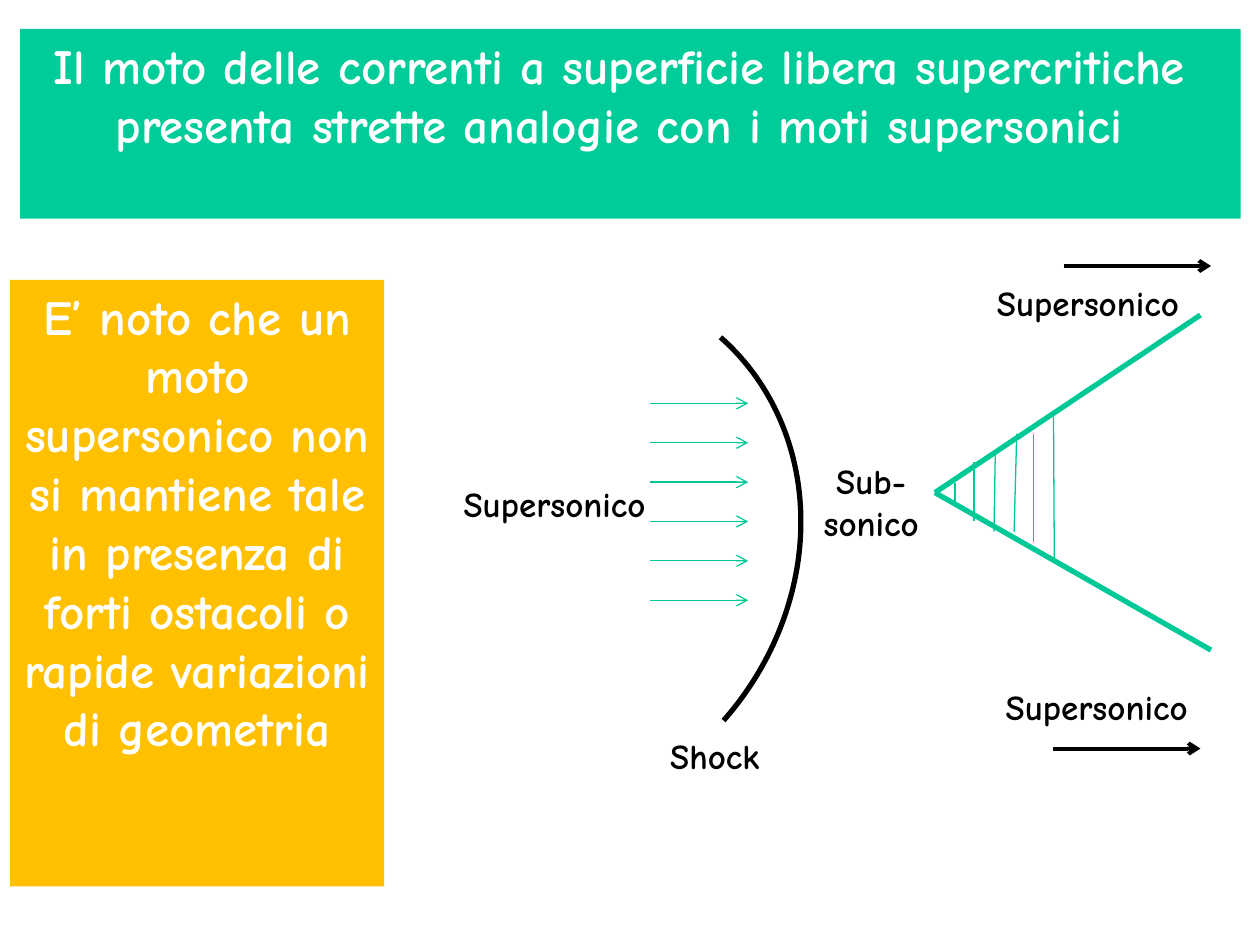
from typing import NamedTuple

import pptx
import pptx.dml.color
import pptx.enum.shapes
import pptx.enum.text
import pptx.oxml
import pptx.oxml.ns
import pptx.util

Pt = pptx.util.Pt
RGBColor = pptx.dml.color.RGBColor
MSO_SHAPE = pptx.enum.shapes.MSO_SHAPE

FONT = "Comic Neue"
WHITE = RGBColor(0xFF, 0xFF, 0xFF)
BLACK = RGBColor(0, 0, 0)
BANNER_GREEN = RGBColor(0x00, 0xCC, 0x99)
LINE_GREEN = RGBColor(0x00, 0xC8, 0x96)
ORANGE = RGBColor(0xFF, 0xC0, 0x00)


class Box(NamedTuple):
    left: float
    top: float
    width: float
    height: float


class Line(NamedTuple):
    x1: float
    y1: float
    x2: float
    y2: float
    color: RGBColor = LINE_GREEN
    weight: float = 0.75
    arrow: bool = False


class Label(NamedTuple):
    text: str
    box: Box


BANNER = Box(11.5, 16.5, 697.5, 108.5)
NOTE = Box(5.75, 160, 213.75, 346.5)
SHOCK = Box(157.75, 152, 292.25, 326.25)
SHOCK_ROTATION = 41.4

APEX = (534.25, 281.5)
WEDGE = [
    Line(*APEX, 686, 180, weight=3),
    Line(*APEX, 692, 371.5, weight=3),
]
HATCHING = [
    Line(545.75, 275.75, 545.75, 286.5),
    Line(556.5, 264.25, 556.5, 298),
    Line(568.75, 258.5, 568, 303.75),
    Line(581, 247.75, 579.5, 303.75),
    Line(590.5, 247.75, 590.5, 309.5),
    Line(602, 236.25, 602.5, 321),
]
INFLOW_TOP, INFLOW_STEP = 230.5, 22.5
INFLOW = [
    Line(371.5, y, 427.5, y, arrow=True)
    for y in (INFLOW_TOP + i * INFLOW_STEP for i in range(6))
]
OUTFLOW = [
    Line(607.75, 152, 692, 152, BLACK, 2.25, True),
    Line(602, 427.75, 686, 427.75, BLACK, 2.25, True),
]
LABELS = [
    Label("Supersonico", Box(224.5, 272, 185, 31.5)),
    Label("Sub-\nsonico", Box(439.25, 259, 117.25, 55.5)),
    Label("Supersonico", Box(529.25, 157.5, 185, 31.5)),
    Label("Supersonico", Box(534.25, 388.25, 185, 31.5)),
    Label("Shock", Box(316, 416.25, 185, 31.5)),
]


def place(sp, box: Box) -> None:
    sp.left, sp.top, sp.width, sp.height = (Pt(v) for v in box)


def write(sp, text: str, size: float, color: RGBColor) -> None:
    """Fill a shape with bold centred text that starts at its top."""
    tf = sp.text_frame
    tf.text = text
    tf.word_wrap = True
    tf.auto_size = pptx.enum.text.MSO_AUTO_SIZE.NONE
    tf.vertical_anchor = pptx.enum.text.MSO_ANCHOR.TOP
    for p in tf.paragraphs:
        p.alignment = pptx.enum.text.PP_ALIGN.CENTER
        for r in p.runs:
            r.font.name = FONT
            r.font.size = Pt(size)
            r.font.bold = True
            r.font.color.rgb = color


def fill(sp, color: RGBColor) -> None:
    sp.fill.solid()
    sp.fill.fore_color.rgb = color
    sp.line.fill.background()


def draw_line(shapes, line: Line) -> None:
    sp = shapes.add_connector(
        pptx.enum.shapes.MSO_CONNECTOR.STRAIGHT,
        Pt(line.x1), Pt(line.y1), Pt(line.x2), Pt(line.y2),
    )
    sp.line.color.rgb = line.color
    sp.line.width = Pt(line.weight)
    spPr = sp._element.spPr
    if line.arrow:
        ln = spPr.find(pptx.oxml.ns.qn("a:ln"))
        ln.append(pptx.oxml.parse_xml(
            f'<a:tailEnd {pptx.oxml.ns.nsdecls("a")} type="arrow"/>'))
    spPr.append(pptx.oxml.parse_xml(
        f'<a:effectLst {pptx.oxml.ns.nsdecls("a")}/>'))


def draw_label(shapes, label: Label) -> None:
    sp = shapes.add_textbox(*(Pt(v) for v in label.box))
    write(sp, label.text, 20, BLACK)


def draw_note(shapes) -> None:
    sp = shapes.add_shape(MSO_SHAPE.RECTANGLE, *(Pt(v) for v in NOTE))
    sp.shadow.inherit = False
    fill(sp, ORANGE)
    write(sp, "E’ noto che un moto supersonico non si mantiene tale in "
              "presenza di forti ostacoli o rapide variazioni di geometria",
          28, WHITE)


def draw_shock(shapes) -> None:
    sp = shapes.add_shape(MSO_SHAPE.ARC, *(Pt(v) for v in SHOCK))
    sp.shadow.inherit = False
    sp.rotation = SHOCK_ROTATION
    sp.fill.background()
    sp.line.color.rgb = BLACK
    sp.line.width = Pt(3)


def main() -> None:
    prs = pptx.Presentation()
    prs.slide_width, prs.slide_height = Pt(720), Pt(540)
    shapes = prs.slides.add_slide(prs.slide_layouts[5]).shapes

    title = shapes.title
    place(title, BANNER)
    fill(title, BANNER_GREEN)
    write(title, "Il moto delle correnti a superficie libera supercritiche\n"
                 "presenta strette analogie con i moti supersonici", 28, WHITE)
    title.text_frame.margin_right = Pt(20)

    draw_note(shapes)
    for line in WEDGE + HATCHING + INFLOW + OUTFLOW:
        draw_line(shapes, line)
    draw_shock(shapes)
    for label in LABELS:
        draw_label(shapes, label)

    prs.save("out.pptx")


if __name__ == "__main__":
    main()
